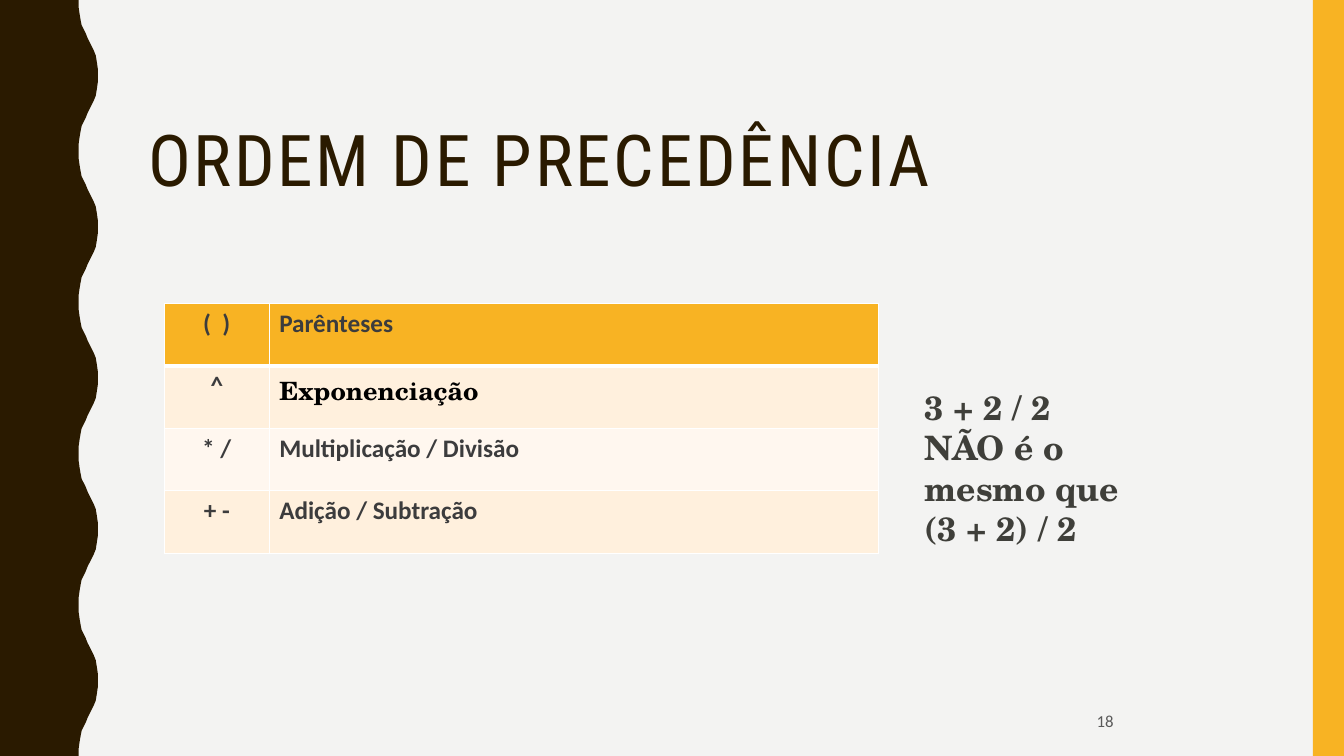
from dataclasses import dataclass

from lxml import etree
from pptx import Presentation
from pptx.dml.color import RGBColor
from pptx.enum.shapes import MSO_SHAPE
from pptx.enum.text import MSO_ANCHOR, PP_ALIGN
from pptx.oxml.ns import qn
from pptx.util import Inches, Pt

RECTANGLE = MSO_SHAPE.RECTANGLE
TOP, MIDDLE, BOTTOM = MSO_ANCHOR.TOP, MSO_ANCHOR.MIDDLE, MSO_ANCHOR.BOTTOM
LEFT, CENTER = PP_ALIGN.LEFT, PP_ALIGN.CENTER


@dataclass(frozen=True)
class Theme:
    """Colours, fonts and type sizes of the slide."""
    background: str = "F3F3F2"
    brown: str = "2A1A00"
    amber: str = "F8B323"
    cream: str = "FFF0DD"
    pale: str = "FFF7EF"
    white: str = "FFFFFF"
    black: str = "000000"
    cell_text: str = "3C3C3D"
    note_text: str = "3F3F3A"
    number_text: str = "595959"
    heading_font: str = "Roboto Condensed"
    body_font: str = "Calibri"
    serif_font: str = "TeX Gyre Schola"
    title_size: int = 51
    note_size: int = 24
    cell_size: int = 18
    number_size: int = 12


THEME = Theme()
SLIDE_WIDTH, SLIDE_HEIGHT = 13.33, 7.5
WAVE_COUNT, WAVE_LENGTH = 5, 1.5
HALF_WAVE = [
    (0.78, 0), (0.78, 0.07), (0.79, 0.14), (0.8, 0.2), (0.81, 0.25),
    (0.83, 0.29), (0.85, 0.33), (0.87, 0.38), (0.89, 0.42), (0.91, 0.46),
    (0.93, 0.5), (0.95, 0.55), (0.96, 0.61), (0.97, 0.68), (0.97, 0.75),
]
PRECEDENCE = [
    ("(  )", "Parênteses"),
    ("^", "Exponenciação"),
    ("* /", "Multiplicação / Divisão"),
    ("+ -", "Adição / Subtração"),
]
ROW_FILLS = [THEME.amber, THEME.cream, THEME.pale, THEME.cream]
COLUMN_WIDTHS = [1.04, 6.04]
ROW_HEIGHT = 0.62


def paint(shape, color):
    """Give a shape a plain fill without line or shadow."""
    shape.shadow.inherit = False
    shape.fill.solid()
    shape.fill.fore_color.rgb = RGBColor.from_string(color)
    shape.line.fill.background()


def style_paragraph(paragraph, font, size, color, bold=False, align=LEFT):
    """Set the font and alignment of a paragraph."""
    paragraph.alignment = align
    paragraph.font.name = font
    paragraph.font.size = Pt(size)
    paragraph.font.bold = bold
    paragraph.font.color.rgb = RGBColor.from_string(color)


def add_wavy_edge(slide):
    """Draw the brown band with the wavy right edge."""
    wave = HALF_WAVE + [(x, WAVE_LENGTH - y) for x, y in HALF_WAVE[-2::-1]]
    edge = [(Inches(x), Inches(y + index * WAVE_LENGTH))
            for index in range(WAVE_COUNT) for x, y in wave]
    builder = slide.shapes.build_freeform(0, 0)
    builder.add_line_segments(edge + [(0, Inches(SLIDE_HEIGHT))], close=True)
    paint(builder.convert_to_shape(), THEME.brown)


def add_side_bar(slide):
    """Draw the amber bar on the right."""
    bar = slide.shapes.add_shape(
        RECTANGLE, Inches(13.02), 0, Inches(0.31), Inches(SLIDE_HEIGHT))
    paint(bar, THEME.amber)


def add_text(slide, box, lines, font, size, color, bold=False, align=LEFT,
             anchor=TOP, line_spacing=None, side_inset=0.1):
    """Add a wrapping text box and return its paragraphs."""
    frame = slide.shapes.add_textbox(*map(Inches, box)).text_frame
    frame.word_wrap = True
    frame.vertical_anchor = anchor
    frame.margin_left = frame.margin_right = Inches(side_inset)
    frame.text = "\n".join(lines)
    for paragraph in frame.paragraphs:
        style_paragraph(paragraph, font, size, color, bold, align)
        paragraph.line_spacing = line_spacing
    return frame.paragraphs


def add_title(slide, text):
    """Add the letter-spaced title."""
    paragraph, = add_text(
        slide, (1.37, 0.42, 11.13, 1.63), [text], THEME.heading_font,
        THEME.title_size, THEME.brown, anchor=BOTTOM, line_spacing=0.9)
    for run in paragraph.runs:
        run._r.get_or_add_rPr().set("spc", "200")


def set_borders(cell, bottom_width):
    """Draw white borders around a table cell."""
    properties = cell._tc.get_or_add_tcPr()
    widths = {"a:lnL": 1, "a:lnR": 1, "a:lnT": 1, "a:lnB": bottom_width}
    for position, (tag, width) in enumerate(widths.items()):
        line = etree.Element(qn(tag), w=str(Pt(width)))
        fill = etree.SubElement(line, qn("a:solidFill"))
        etree.SubElement(fill, qn("a:srgbClr"), val=THEME.white)
        properties.insert(position, line)


def add_precedence_table(slide):
    """Add the table of operators in order of precedence."""
    table = slide.shapes.add_table(
        len(PRECEDENCE), len(COLUMN_WIDTHS), Inches(1.63), Inches(3.01),
        Inches(sum(COLUMN_WIDTHS)), Inches(ROW_HEIGHT * len(PRECEDENCE))).table
    table.first_row = table.horz_banding = False
    for column, width in zip(table.columns, COLUMN_WIDTHS):
        column.width = Inches(width)
    for row_index, texts in enumerate(PRECEDENCE):
        for column_index, text in enumerate(texts):
            cell = table.cell(row_index, column_index)
            cell.text = text
            cell.fill.solid()
            cell.fill.fore_color.rgb = RGBColor.from_string(ROW_FILLS[row_index])
            set_borders(cell, 3 if row_index == 0 else 1)
            serif = text == "Exponenciação"
            style_paragraph(
                cell.text_frame.paragraphs[0],
                THEME.serif_font if serif else THEME.body_font,
                THEME.cell_size, THEME.black if serif else THEME.cell_text,
                True, LEFT if column_index else CENTER)


def main():
    """Build the slide and save it."""
    presentation = Presentation()
    presentation.slide_width = Inches(SLIDE_WIDTH)
    presentation.slide_height = Inches(SLIDE_HEIGHT)
    slide = presentation.slides.add_slide(presentation.slide_layouts[6])
    background = slide.background.fill
    background.solid()
    background.fore_color.rgb = RGBColor.from_string(THEME.background)
    add_wavy_edge(slide)
    add_side_bar(slide)
    add_title(slide, "ORDEM DE PRECEDÊNCIA")
    add_text(slide, (9.42, 6.97, 3.08, 0.38), ["18"], THEME.body_font,
             THEME.number_size, THEME.number_text, align=CENTER,
             anchor=MIDDLE, line_spacing=0.9, side_inset=0.05)
    add_precedence_table(slide)
    add_text(slide, (9.07, 3.79, 2.63, 1.72),
             ["3 + 2 / 2", "NÃO é o mesmo que", "(3 + 2) / 2"],
             THEME.serif_font, THEME.note_size, THEME.note_text, bold=True)
    presentation.save("out.pptx")


if __name__ == "__main__":
    main()
